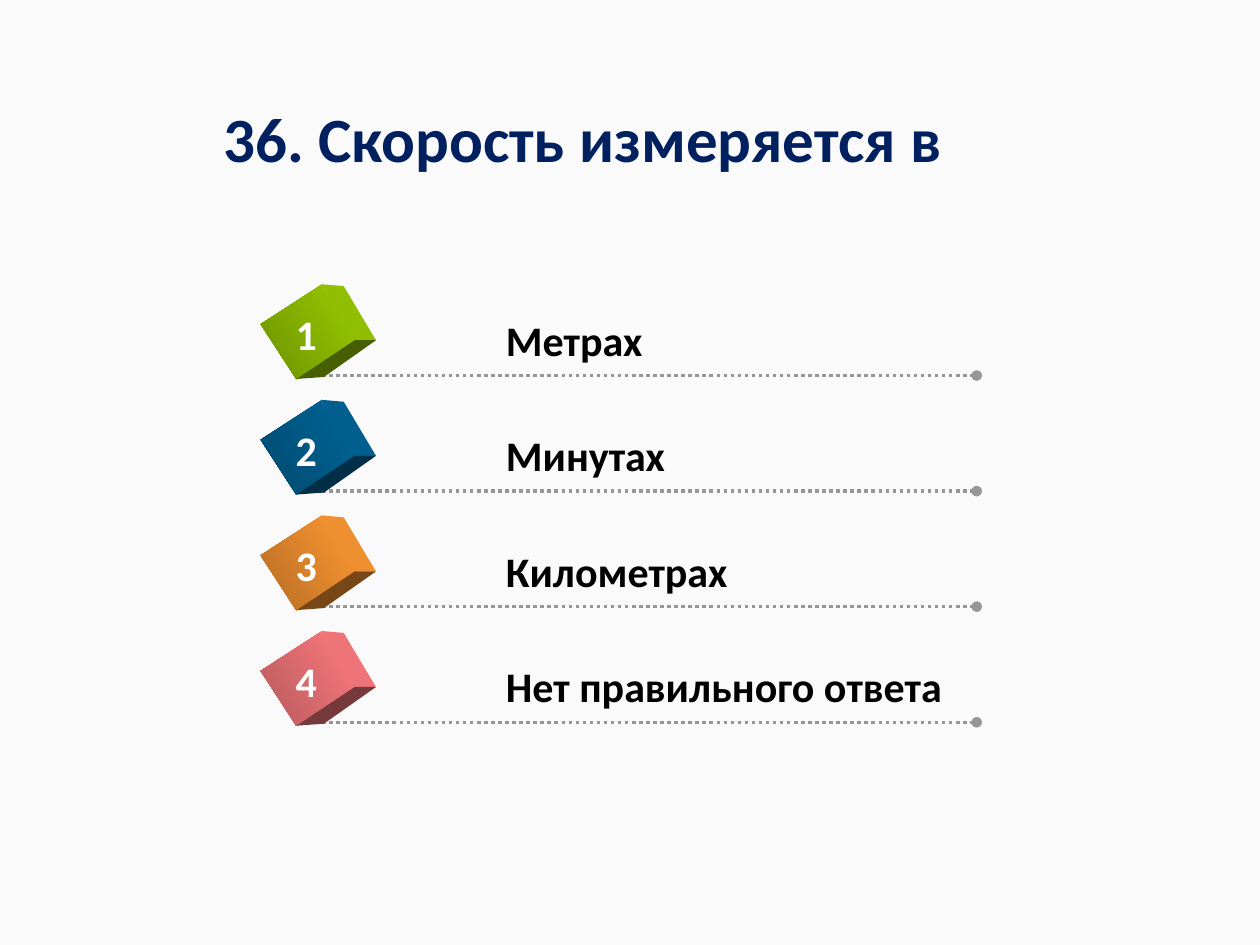
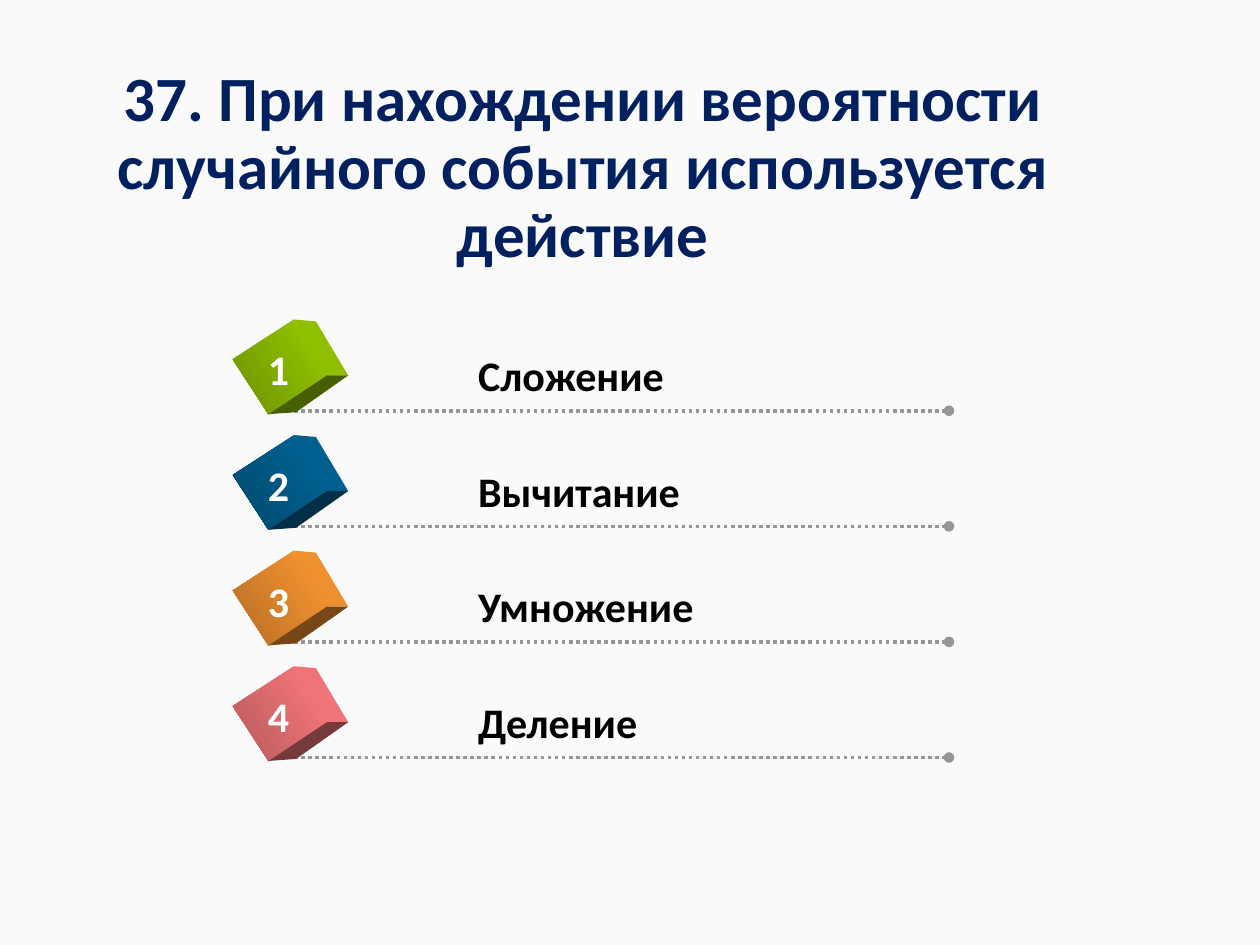
from dataclasses import dataclass

from lxml import etree
from pptx import Presentation
from pptx.dml.color import RGBColor
from pptx.enum import dml, shapes, text
from pptx.oxml.ns import qn
from pptx.util import Cm, Pt

FONT = "Calibri"
PAPER = RGBColor(0xFA, 0xFA, 0xFA)
NAVY = RGBColor(0x00, 0x20, 0x60)
BLACK = RGBColor(0x00, 0x00, 0x00)
WHITE = RGBColor(0xFF, 0xFF, 0xFF)
GRAY = RGBColor(0x96, 0x96, 0x96)

ROW_PITCH = 2.33
RULE_LENGTH = 13.34
NUMBER_WIDTH = 0.99
LABEL_HEIGHT = 1.29
RIGHT_FACE = ((0.91, -0.24), (1.37, -0.2), (2.02, 0.89), (1.59, 0.89))
BOTTOM_FACE = ((1.59, 0.89), (2.02, 0.89), (0.97, 1.63), (0.42, 1.67))


@dataclass(frozen=True)
class CubeColors:
    bright: RGBColor
    dark: RGBColor
    right: RGBColor
    bottom: RGBColor


@dataclass(frozen=True)
class Answer:
    label: str
    width: float


@dataclass(frozen=True)
class Question:
    title: str
    title_height: float
    left: float
    top: float
    answers: tuple[Answer, ...]


CUBES = (
    CubeColors(RGBColor(0x99, 0xCC, 0x00), RGBColor(0x6D, 0x92, 0x00),
               RGBColor(0x8F, 0xBF, 0x00), RGBColor(0x47, 0x5F, 0x00)),
    CubeColors(RGBColor(0x00, 0x66, 0x99), RGBColor(0x00, 0x49, 0x6D),
               RGBColor(0x00, 0x5F, 0x8F), RGBColor(0x00, 0x2F, 0x47)),
    CubeColors(RGBColor(0xFF, 0x99, 0x33), RGBColor(0xB6, 0x6D, 0x24),
               RGBColor(0xEE, 0x8F, 0x30), RGBColor(0x77, 0x47, 0x18)),
    CubeColors(RGBColor(0xFF, 0x7C, 0x80), RGBColor(0xB6, 0x59, 0x5C),
               RGBColor(0xEE, 0x74, 0x78), RGBColor(0x77, 0x3A, 0x3C)),
)

QUESTIONS = (
    Question("36. Скорость измеряется в", 2.21, 5.56, 5.97, (
        Answer("Метрах", 3.3),
        Answer("Минутах", 3.76),
        Answer("Километрах", 5.21),
        Answer("Нет правильного ответа", 9.4),
    )),
    Question("37. При нахождении вероятности случайного события используется действие",
             3.33, 5.0, 6.68, (
                 Answer("Сложение", 4.29),
                 Answer("Вычитание", 4.62),
                 Answer("Умножение", 5.08),
                 Answer("Деление", 3.76),
             )),
)


def format_run(r, size: float, color: RGBColor) -> None:
    r.font.name = FONT
    r.font.size = Pt(size)
    r.font.bold = True
    r.font.color.rgb = color


def add_title(s, question: Question) -> None:
    sp = s.shapes.title
    sp.left, sp.top = Cm(1.83), Cm(1.75)
    sp.width, sp.height = Cm(19.84), Cm(question.title_height)
    tf = sp.text_frame
    tf.text = question.title
    tf.word_wrap = True
    tf.auto_size = text.MSO_AUTO_SIZE.NONE
    tf.vertical_anchor = text.MSO_ANCHOR.MIDDLE
    p = tf.paragraphs[0]
    p.alignment = text.PP_ALIGN.CENTER
    p.line_spacing = 0.9
    r = p.runs[0]
    format_run(r, 36, NAVY)
    ln = etree.Element(qn("a:ln"), w=str(Pt(0.75)))
    fill = etree.SubElement(ln, qn("a:solidFill"))
    etree.SubElement(fill, qn("a:srgbClr"), val=str(WHITE))
    r.font._element.insert(0, ln)


def add_rule(group, left: float, y: float) -> None:
    line = group.shapes.add_connector(shapes.MSO_CONNECTOR.STRAIGHT, Cm(left), Cm(y),
                                      Cm(left + RULE_LENGTH), Cm(y))
    line.line.color.rgb = GRAY
    line.line.width = Pt(2)
    line.line.dash_style = dml.MSO_LINE.ROUND_DOT
    etree.SubElement(line.line._get_or_add_ln(), qn("a:tailEnd"), type="oval")
    etree.SubElement(line._element.spPr, qn("a:effectLst"))


def add_face(group, left: float, top: float, corners, color: RGBColor) -> None:
    points = [(Cm(left + x), Cm(top + y)) for x, y in corners]
    fb = group.shapes.build_freeform(*points[0])
    fb.add_line_segments(points[1:], close=True)
    sp = fb.convert_to_shape()
    sp.shadow.inherit = False
    sp.fill.solid()
    sp.fill.fore_color.rgb = color
    sp.line.fill.background()


def add_cube(group, left: float, top: float, colors: CubeColors) -> None:
    sp = group.shapes.add_shape(shapes.MSO_SHAPE.RECTANGLE, Cm(left), Cm(top), Cm(1.32), Cm(1.45))
    sp.rotation = 57
    sp.shadow.inherit = False
    sp.line.fill.background()
    sp.fill.gradient()
    sp.fill.gradient_angle = 270
    for stop, color in zip(sp.fill.gradient_stops, (colors.bright, colors.dark)):
        stop.color.rgb = color
    add_face(group, left, top, RIGHT_FACE, colors.right)
    add_face(group, left, top, BOTTOM_FACE, colors.bottom)


def add_label(group, left: float, top: float, width: float, label: str, color: RGBColor) -> None:
    sp = group.shapes.add_textbox(Cm(left), Cm(top), Cm(width), Cm(LABEL_HEIGHT))
    tf = sp.text_frame
    tf.text = label
    tf.word_wrap = False
    tf.auto_size = text.MSO_AUTO_SIZE.SHAPE_TO_FIT_TEXT
    format_run(tf.paragraphs[0].runs[0], 24, color)


def add_answer(s, number: int, left: float, top: float, answer: Answer, colors: CubeColors) -> None:
    group = s.shapes.add_group_shape()
    add_rule(group, left + 0.79, top + 1.6)
    add_cube(group, left, top, colors)
    add_label(group, left + 4.39, top + 0.24, answer.width, answer.label, BLACK)
    add_label(group, left + 0.15, top + 0.13, NUMBER_WIDTH, str(number), WHITE)


def add_question(prs, question: Question) -> None:
    s = prs.slides.add_slide(prs.slide_layouts.get_by_name("Title Only"))
    add_title(s, question)
    for i, (answer, colors) in enumerate(zip(question.answers, CUBES)):
        add_answer(s, i + 1, question.left, question.top + i * ROW_PITCH, answer, colors)


def main() -> None:
    prs = Presentation()
    prs.slide_width, prs.slide_height = Cm(25.4), Cm(19.05)
    background = prs.slide_master.background.fill
    background.solid()
    background.fore_color.rgb = PAPER
    for question in QUESTIONS:
        add_question(prs, question)
    prs.save("out.pptx")


if __name__ == "__main__":
    main()
